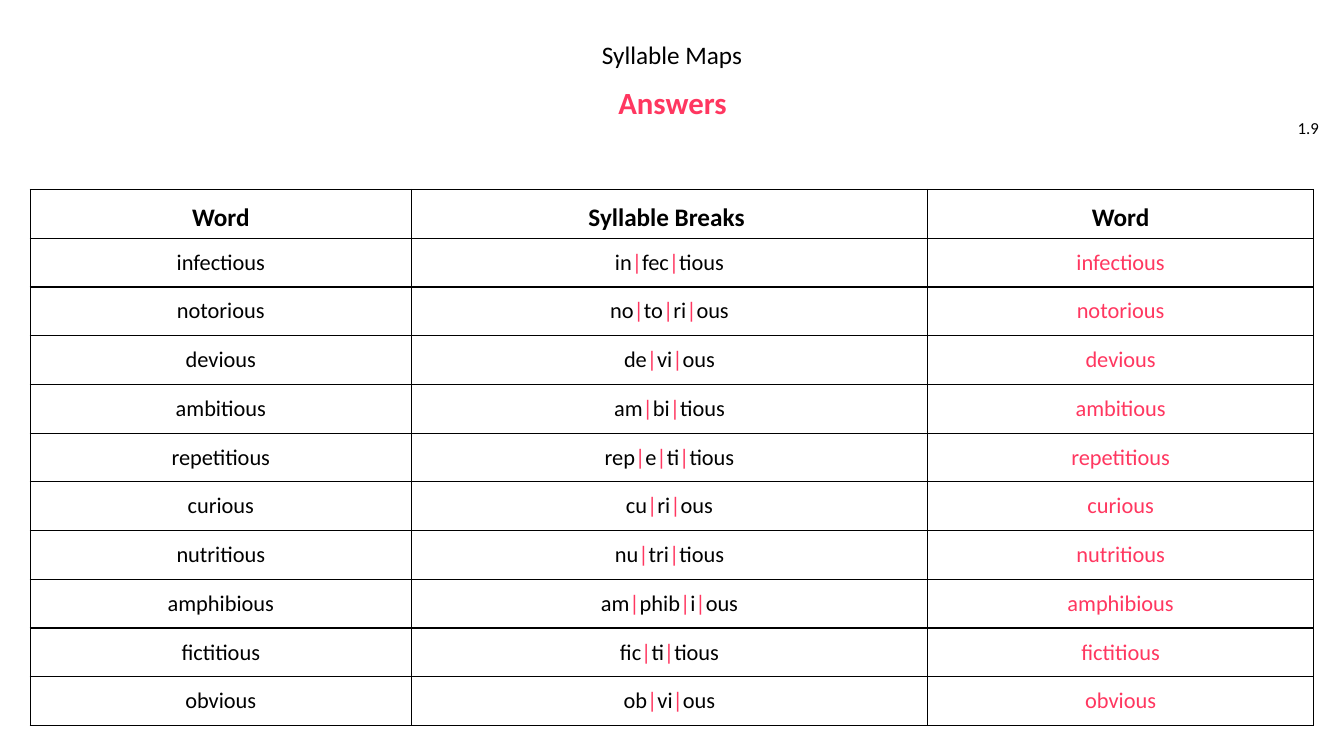
from lxml import etree
from pptx import Presentation, util as u
from pptx.dml.color import RGBColor
from pptx.enum import shapes, text
from pptx.oxml.ns import qn

PX = 9144  # EMU per px, 100 px to the inch
FONT = "Calibri"
COLORS = {"ink": "000000", "answer": "FF3760", "paper": "FFFFFF"}
WORDS = [
    "in|fec|tious", "no|to|ri|ous", "de|vi|ous", "am|bi|tious", "rep|e|ti|tious",
    "cu|ri|ous", "nu|tri|tious", "am|phib|i|ous", "fic|ti|tious", "ob|vi|ous",
]


def color(name):
    return RGBColor.from_string(COLORS[name])


class SlideBuilder:
    def __init__(self, slide):
        self.slide = slide

    def runs(self, paragraph, pieces, size, bold=False):
        """Add (words, colour name) pieces, one run each."""
        for words, color_name in pieces:
            run = paragraph.add_run()
            run.text = words
            run.font.name = FONT
            run.font.size = u.Pt(size)
            run.font.bold = bold
            run.font.color.rgb = color(color_name)

    def panel(self, left, top, width, height):
        shape = self.slide.shapes.add_shape(
            shapes.MSO_SHAPE.RECTANGLE, left * PX, top * PX, width * PX, height * PX)
        shape.shadow.inherit = False
        shape.fill.solid()
        shape.fill.fore_color.rgb = color("paper")
        shape.line.fill.background()

    def label(self, box, words, size, color_name="ink", bold=False,
              align=text.PP_ALIGN.CENTER, anchor=text.MSO_ANCHOR.MIDDLE, spacing=0.9):
        frame = self.slide.shapes.add_textbox(*(length * PX for length in box)).text_frame
        frame.word_wrap = True
        frame.vertical_anchor = anchor
        paragraph = frame.paragraphs[0]
        paragraph.alignment = align
        paragraph.line_spacing = spacing
        self.runs(paragraph, [(words, color_name)], size, bold)

    def table(self, left, top, widths, height, row_count):
        table = self.slide.shapes.add_table(
            row_count, len(widths), left * PX, top * PX, sum(widths) * PX, height * PX).table
        for column, width in zip(table.columns, widths):
            column.width = width * PX
        for row in table.rows:
            row.height = height * PX // row_count
        return table

    def cell(self, cell, pieces, size, bold=False, anchor=text.MSO_ANCHOR.MIDDLE, inset=10):
        cell.vertical_anchor = anchor
        cell.margin_left = cell.margin_right = inset * PX
        cell.margin_top = cell.margin_bottom = 5 * PX
        paragraph = cell.text_frame.paragraphs[0]
        paragraph.alignment = text.PP_ALIGN.CENTER
        self.runs(paragraph, pieces, size, bold)
        # Borders come before the fill in the cell properties
        properties = cell._tc.get_or_add_tcPr()
        for side in ("a:lnL", "a:lnR", "a:lnT", "a:lnB"):
            line = etree.SubElement(properties, qn(side), w=str(u.Pt(1)))
            fill = etree.SubElement(line, qn("a:solidFill"))
            etree.SubElement(fill, qn("a:srgbClr"), val=COLORS["ink"])
        cell.fill.solid()
        cell.fill.fore_color.rgb = color("paper")


def syllable_pieces(syllables):
    """Split into black syllables and coloured break marks."""
    pieces = []
    for syllable in syllables.split("|"):
        if pieces:
            pieces.append(("|", "answer"))
        pieces.append((syllable, "ink"))
    return pieces


def main():
    presentation = Presentation()
    presentation.slide_width = 1333 * PX
    presentation.slide_height = 750 * PX
    builder = SlideBuilder(presentation.slides.add_slide(presentation.slide_layouts[6]))

    # Background panel and headings
    builder.panel(18, 177, 1297, 557)
    builder.label((1255, 107, 63, 40), "1.9", 12, align=text.PP_ALIGN.RIGHT, spacing=1.0)
    builder.label((382, 37, 569, 35), "Syllable Maps", 18, anchor=text.MSO_ANCHOR.TOP)
    builder.label((209, 84, 916, 40), "Answers", 22, "answer", bold=True)

    # Table header
    table = builder.table(30, 188, (378, 512, 383), 532, len(WORDS) + 1)
    for column, heading in enumerate(("Word", "Syllable Breaks ", "Word")):
        builder.cell(table.cell(0, column), [(heading, "ink")], 18, bold=True,
                     anchor=text.MSO_ANCHOR.BOTTOM, inset=11)

    # One row per word: plain, broken into syllables, answer
    for row, syllables in enumerate(WORDS, start=1):
        word = syllables.replace("|", "")
        row_pieces = ([(word, "ink")], syllable_pieces(syllables), [(word, "answer")])
        for column, pieces in enumerate(row_pieces):
            builder.cell(table.cell(row, column), pieces, 16)

    presentation.save("out.pptx")


if __name__ == "__main__":
    main()
